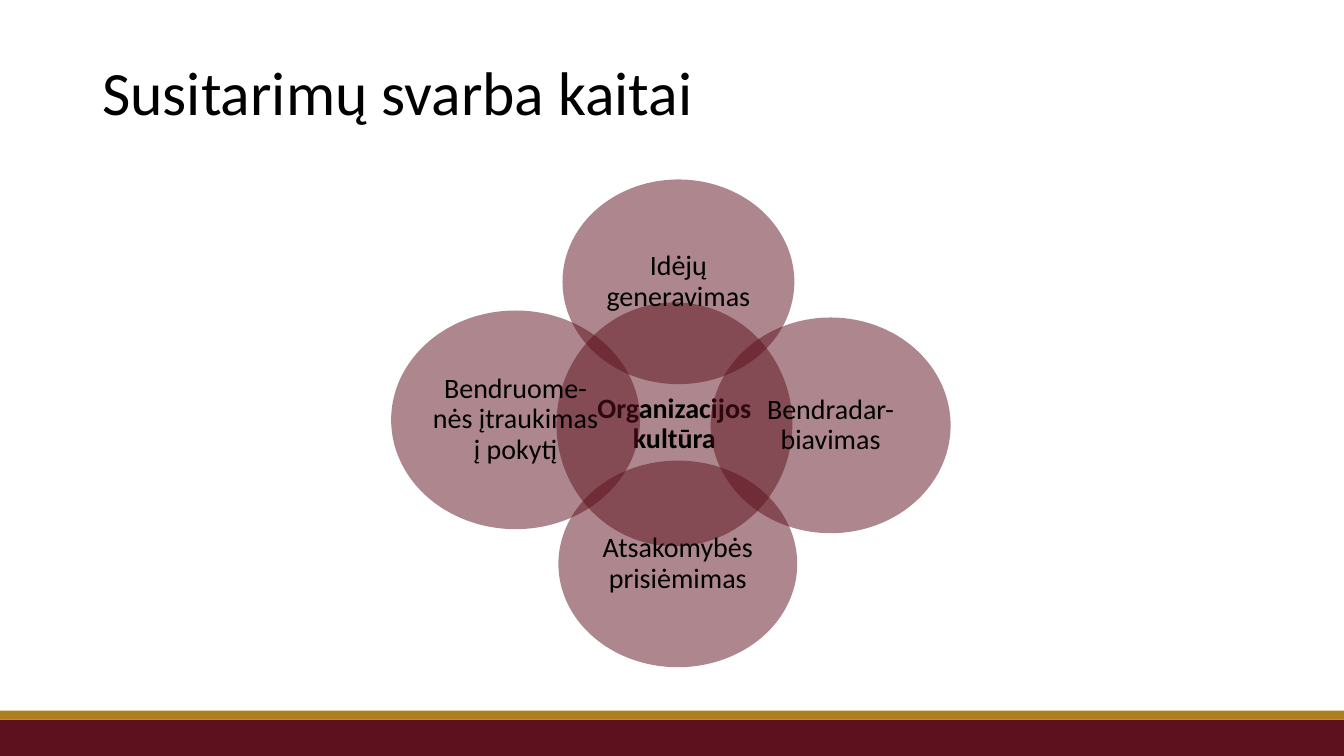
from pptx import Presentation
from pptx.dml.color import RGBColor
from pptx.enum.shapes import MSO_SHAPE as Shape
from pptx.enum.text import MSO_ANCHOR as Anchor, PP_ALIGN as Align
from pptx.oxml.ns import qn
from pptx.util import Pt
from lxml import etree

WIDTH, HEIGHT = 960, 540
MAROON, GOLD, BLACK = "5D101D", "AF7F1F", "000000"

# Label, left, top, width, height, bold; from back to front
CIRCLES = [
    ("Organizacijos kultūra", 397.5, 216, 168.5, 174.2, True),
    ("Idėjų generavimas", 401.8, 128.2, 165.6, 146.2, False),
    ("Bendradar- biavimas", 507.6, 226.8, 171.4, 154.1, False),
    ("Atsakomybės prisiėmimas", 398.9, 329, 170.6, 147.6, False),
    ("Bendruome-nės įtraukimas į pokytį", 279.4, 221.8, 177.8, 156.2, False),
]


def color(value):
    return RGBColor.from_string(value)


def write_text(shape, text, size, align, bold=False):
    frame = shape.text_frame
    frame.word_wrap = True
    frame.vertical_anchor = Anchor.MIDDLE
    frame.text = text
    paragraph = frame.paragraphs[0]
    paragraph.alignment = align
    paragraph.line_spacing = 0.9
    font = paragraph.font
    font.name, font.size, font.bold = "Calibri", Pt(size), bold
    font.color.rgb = color(BLACK)


def add_filled(slide, kind, left, top, width, height, fill):
    shape = slide.shapes.add_shape(kind, Pt(left), Pt(top), Pt(width), Pt(height))
    shape.shadow.inherit = False
    shape.fill.solid()
    shape.fill.fore_color.rgb = color(fill)
    shape.line.fill.background()
    return shape


def add_circle(slide, label, left, top, width, height, bold):
    circle = add_filled(slide, Shape.OVAL, left, top, width, height, MAROON)
    # Half transparency, so that overlaps show
    fill_color = circle.fill._xPr.find(qn("a:solidFill"))[0]
    etree.SubElement(fill_color, qn("a:alpha")).set("val", "50000")
    frame = circle.text_frame
    frame.margin_left = frame.margin_right = Pt(2)
    frame.margin_top = frame.margin_bottom = Pt(2)
    write_text(circle, label, 20, Align.CENTER, bold)


def add_title(slide, text):
    title = slide.shapes.add_textbox(Pt(66), Pt(16), Pt(705), Pt(104))
    write_text(title, text, 44, Align.LEFT)


def main():
    presentation = Presentation()
    presentation.slide_width, presentation.slide_height = Pt(WIDTH), Pt(HEIGHT)
    slide = presentation.slides.add_slide(presentation.slide_layouts[6])

    # Footer bands
    add_filled(slide, Shape.RECTANGLE, 0, 514, WIDTH, HEIGHT - 514, MAROON)
    add_filled(slide, Shape.RECTANGLE, 0, 507.6, WIDTH, 6.4, GOLD)

    # Title and overlapping circles
    add_title(slide, "Susitarimų svarba kaitai")
    for circle in CIRCLES:
        add_circle(slide, *circle)

    presentation.save("out.pptx")


if __name__ == "__main__":
    main()
